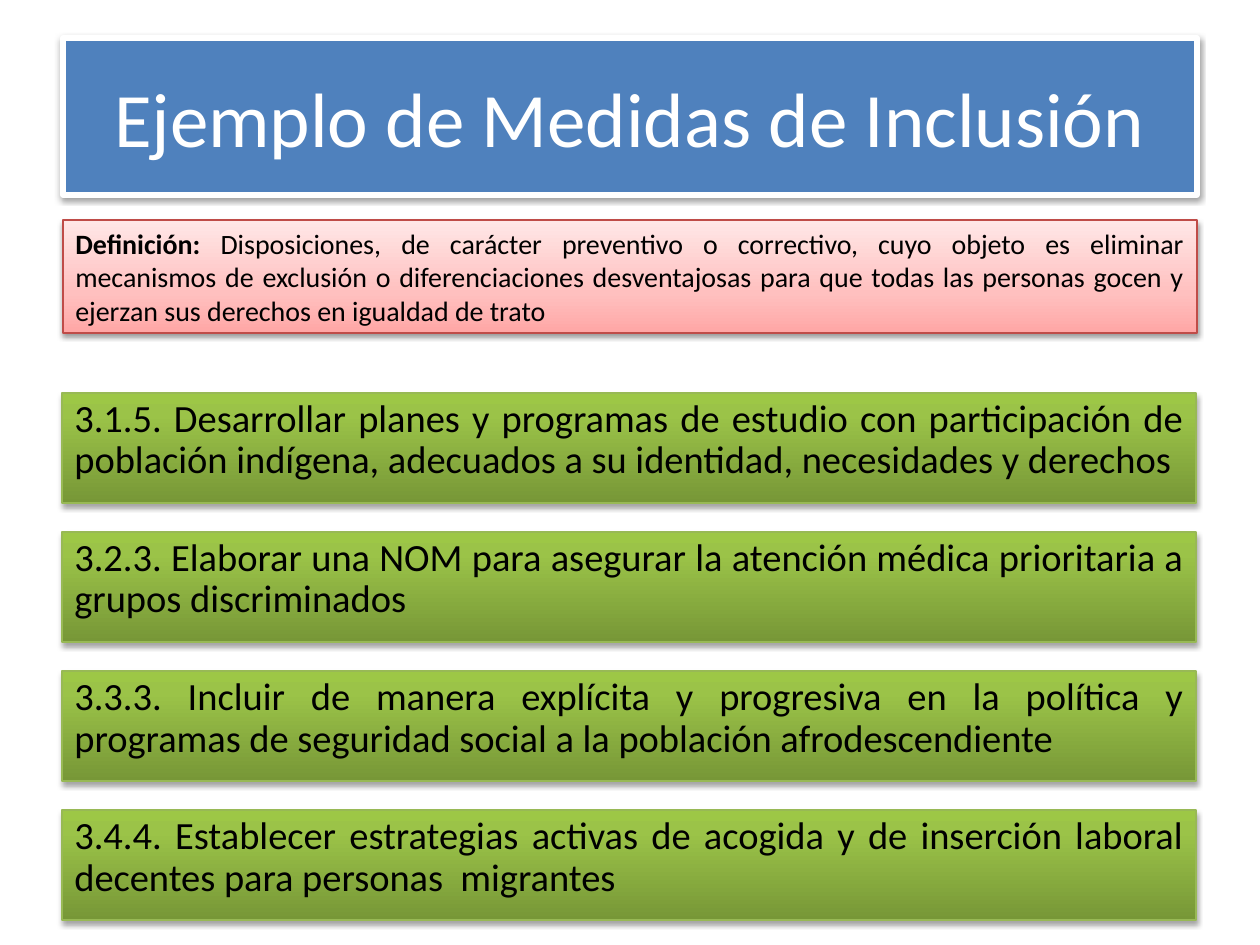
import copy

import pptx
import pptx.dml.color
import pptx.enum.shapes
import pptx.enum.text
import pptx.oxml
import pptx.oxml.ns
import pptx.util

RGB = pptx.dml.color.RGBColor
ALIGN = pptx.enum.text.PP_ALIGN
ANCHOR = pptx.enum.text.MSO_ANCHOR
qn = pptx.oxml.ns.qn

PX = 914400 / 126
WHITE = RGB(0xFF, 0xFF, 0xFF)
BLACK = RGB(0x00, 0x00, 0x00)
BLUE = RGB(0x4F, 0x81, 0xBD)
RED_LINE = RGB(0xBF, 0x4C, 0x48)
GREEN_LINE = RGB(0x98, 0xB9, 0x55)
RED_STOPS = [(0, RGB(0xFF, 0xA6, 0xA5)), (0.35, RGB(0xFF, 0xC0, 0xBF)), (1, RGB(0xFF, 0xE7, 0xE7))]
GREEN_STOPS = [(0, RGB(0x77, 0x97, 0x37)), (0.8, RGB(0x9B, 0xC3, 0x48)), (1, RGB(0x9D, 0xC7, 0x46))]

TITLE = "Ejemplo de Medidas de Inclusión"
DEFINITION = [
    ("Definición: ", True),
    ("Disposiciones, de carácter preventivo o correctivo, cuyo objeto es eliminar mecanismos de "
     "exclusión o diferenciaciones desventajosas para que todas las personas gocen y ejerzan sus "
     "derechos en igualdad de trato", False),
]
MEASURES = [
    "3.1.5. Desarrollar planes y programas de estudio con participación de población indígena, "
    "adecuados a su identidad, necesidades y derechos",
    "3.2.3. Elaborar una NOM para asegurar la atención médica prioritaria a grupos discriminados",
    "3.3.3. Incluir de manera explícita y progresiva en la política y programas de seguridad social "
    "a la población afrodescendiente",
    "3.4.4. Establecer estrategias activas de acogida y de inserción laboral decentes para personas  migrantes",
]


def add_box(box, line, line_width, shadow_alpha, shadow_dist, size, color, align, anchor):
    """Add a shadowed rectangle, given in px, and return it with its first paragraph."""
    sp = s.shapes.add_shape(pptx.enum.shapes.MSO_SHAPE.RECTANGLE, *(round(v * PX) for v in box))
    sp.line.color.rgb = line
    sp.line.width = pptx.util.Pt(line_width)
    sp.shadow.inherit = False
    sp._element.spPr.find(qn("a:effectLst")).append(pptx.oxml.parse_xml(
        f'<a:outerShdw xmlns:a="http://schemas.openxmlformats.org/drawingml/2006/main" blurRad="40000" '
        f'dist="{pptx.util.Pt(shadow_dist)}" dir="5400000" rotWithShape="0">'
        f'<a:srgbClr val="000000"><a:alpha val="{shadow_alpha * 1000}"/></a:srgbClr></a:outerShdw>'))
    tf = sp.text_frame
    tf.word_wrap = True
    tf.vertical_anchor = anchor
    p = tf.paragraphs[0]
    p.alignment = align
    p.font.name = "Calibri"
    p.font.size = pptx.util.Pt(size)
    p.font.color.rgb = color
    return sp, p


def fill_gradient(sp, stops):
    """Fill from bottom to top with three stops."""
    sp.fill.gradient()
    sp.fill.gradient_angle = 90
    gs_list = sp._element.spPr.find(".//" + qn("a:gsLst"))
    gs_list.append(copy.deepcopy(gs_list[0]))
    for stop, (position, color) in zip(sp.fill.gradient_stops, stops):
        stop.position = position
        stop.color.rgb = color


prs = pptx.Presentation()
prs.slide_width = pptx.util.Inches(10)
prs.slide_height = pptx.util.Inches(7.5)
s = prs.slides.add_slide(prs.slide_layouts[6])

# Title
sp, p = add_box((63, 38, 1134, 157), WHITE, 3, 38, 1.6, 44, WHITE, ALIGN.CENTER, ANCHOR.MIDDLE)
sp.fill.solid()
sp.fill.fore_color.rgb = BLUE
p.add_run().text = TITLE

# Definition
sp, p = add_box((63, 220, 1134, 113), RED_LINE, 0.75, 38, 1.6, 16, BLACK, ALIGN.JUSTIFY, ANCHOR.TOP)
fill_gradient(sp, RED_STOPS)
p.space_before = pptx.util.Pt(3.2)
for text, bold in DEFINITION:
    r = p.add_run()
    r.text = text
    r.font.bold = bold

# Measures
for i, measure in enumerate(MEASURES):
    sp, p = add_box((62, 393 + 139 * i, 1134, 110), GREEN_LINE, 0.75, 35, 1.8, 22, BLACK,
                    ALIGN.JUSTIFY, ANCHOR.TOP)
    fill_gradient(sp, GREEN_STOPS)
    p.line_spacing = 0.9
    p.space_before = pptx.util.Pt(4.4)
    p.add_run().text = measure

prs.save("out.pptx")
